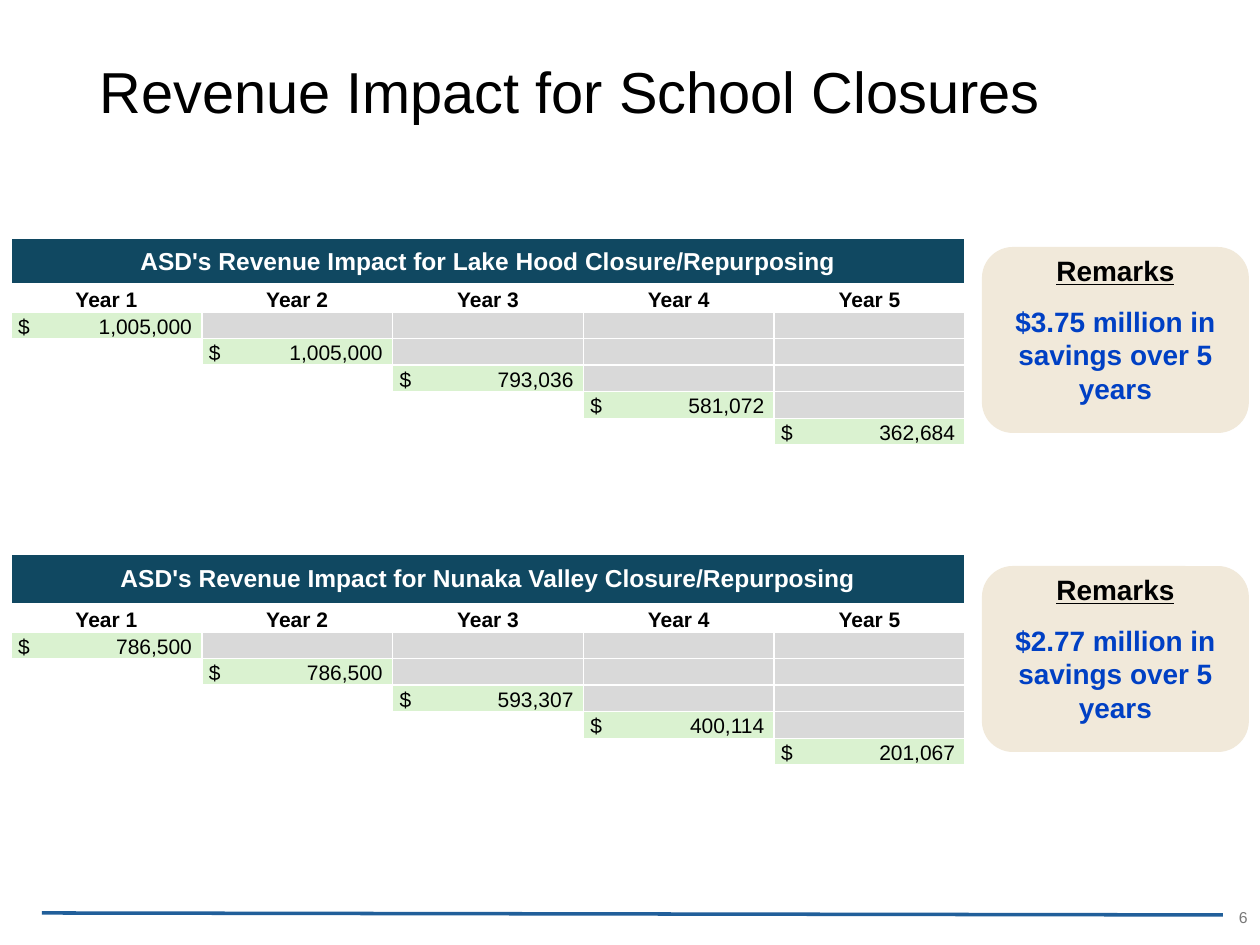
from lxml.etree import SubElement
from pptx import Presentation
from pptx.dml.color import RGBColor
from pptx.enum.shapes import MSO_CONNECTOR as Link, MSO_SHAPE as Shape
from pptx.enum.text import MSO_ANCHOR as Anchor, PP_ALIGN as Align
from pptx.oxml.ns import qn
from pptx.util import Pt

PX = 914400 // 126
FONT = "Arial"
BLACK = RGBColor(0, 0, 0)
WHITE = RGBColor(255, 255, 255)
NAVY = RGBColor(0x10, 0x48, 0x61)
GREEN = RGBColor(0xDA, 0xF2, 0xD0)
GRAY = RGBColor(0xD9, 0xD9, 0xD9)
SAND = RGBColor(0xF1, 0xE9, 0xDA)
BLUE = RGBColor(0x00, 0x40, 0xC4)
RULE = RGBColor(0x21, 0x5F, 0x9A)
PALE = RGBColor(0x79, 0x79, 0x79)

TITLE = "Revenue Impact for School Closures"
PAGE = "6"
YEARS = 5
SCHOOLS = [
    dict(head="ASD's Revenue Impact for Lake Hood Closure/Repurposing",
         sums=["1,005,000", "1,005,000", "793,036", "581,072", "362,684"],
         note="$3.75 million in savings over 5 years",
         top=238, band=46, card=247),
    dict(head="ASD's Revenue Impact for Nunaka Valley Closure/Repurposing",
         sums=["786,500", "786,500", "593,307", "400,114", "201,067"],
         note="$2.77 million in savings over 5 years",
         top=554, band=50, card=566),
]
LEFT, WIDE = 11, 954      # tables
LABEL, STEPS = 28, 133    # year row, all amount rows together
CARD_X, CARD_W, CARD_H = 982, 267, 186


def px(*sizes):
    return [round(size * PX) for size in sizes]


def write(frame, text, size, color, align=Align.LEFT, anchor=Anchor.TOP, **form):
    frame.word_wrap = True
    frame.vertical_anchor = anchor
    para = frame.paragraphs[0]
    para.alignment = align
    run = para.add_run()
    run.text = text
    run.font.color.rgb = color
    look = dict(name=FONT, size=Pt(size), **form)
    for key, value in look.items():
        setattr(run.font, key, value)
    return para


def label(slide, box, *args, **form):
    return write(slide.shapes.add_textbox(*px(*box)).text_frame, *args, **form)


def paint(cell, color):
    cell.fill.solid()
    cell.fill.fore_color.rgb = color


def amount(cell, text):
    """Dollar sign at the left, figure at a right tab."""
    cell.margin_left = 7 * PX
    props = cell.text_frame.paragraphs[0]._p.get_or_add_pPr()
    tabs = SubElement(props, qn("a:tabLst"))
    SubElement(tabs, qn("a:tab"), pos=str(174 * PX), algn="r")
    write(cell.text_frame, "$\t" + text, 12, BLACK)


def add_grid(slide, school):
    heights = [school["band"], LABEL] + [STEPS / YEARS] * YEARS
    box = px(LEFT, school["top"], WIDE, sum(heights))
    grid = slide.shapes.add_table(len(heights), YEARS, *box).table
    grid.first_row = grid.horz_banding = False
    for row, height in zip(grid.rows, px(*heights)):
        row.height = height
    for col in grid.columns:
        col.width = px(WIDE / YEARS)[0]
    for cell in grid.iter_cells():
        cell.margin_left = cell.margin_right = cell.margin_top = PX
        cell.margin_bottom = 0
        cell.vertical_anchor = Anchor.BOTTOM

    head = grid.cell(0, 0)
    head.merge(grid.cell(0, YEARS - 1))
    paint(head, NAVY)
    write(head.text_frame, school["head"], 14, WHITE, Align.CENTER, bold=True)
    head.vertical_anchor = Anchor.MIDDLE

    for year in range(YEARS):
        cell = grid.cell(1, year)
        cell.fill.background()
        write(cell.text_frame, f"Year {year + 1}", 12, BLACK, Align.CENTER,
              bold=True)
        cell.vertical_anchor = Anchor.BOTTOM
        for step, value in enumerate(school["sums"]):
            cell = grid.cell(step + 2, year)
            if step == year:
                paint(cell, GREEN)
                amount(cell, value)
            else:
                paint(cell, GRAY if year > step else WHITE)
                para = cell.text_frame.paragraphs[0]._p
                SubElement(para, qn("a:endParaRPr"), sz="1200")
            cell.vertical_anchor = Anchor.BOTTOM


def add_card(slide, school):
    top = school["card"]
    card = slide.shapes.add_shape(Shape.ROUNDED_RECTANGLE,
                                  *px(CARD_X, top, CARD_W, CARD_H))
    card.shadow.inherit = False
    card.fill.solid()
    card.fill.fore_color.rgb = SAND
    card.line.fill.background()
    label(slide, (CARD_X + 61, top, 145, 47), "Remarks", 16, BLACK,
          Align.CENTER, bold=True, underline=True)
    para = label(slide, (CARD_X, top + 51, CARD_W, 115), school["note"], 16,
                 BLUE, Align.CENTER, bold=True)
    para.space_after = Pt(18)


def main():
    deck = Presentation()
    deck.slide_width, deck.slide_height = px(1260, 945)
    slide = deck.slides.add_slide(deck.slide_layouts[5])

    rule = slide.shapes.add_connector(Link.STRAIGHT, *px(1223, 915, 42, 913))
    rule.line.color.rgb = RULE
    rule.line.width = Pt(2)
    SubElement(rule._element.spPr, qn("a:effectLst"))

    title = slide.shapes.title
    title.left, title.top, title.width, title.height = px(87, 3, 1086, 183)
    para = write(title.text_frame, TITLE, 33, BLACK, anchor=Anchor.MIDDLE)
    para.line_spacing = 0.9
    label(slide, (976, 892, 284, 50), PAGE, 9, PALE, Align.RIGHT, Anchor.MIDDLE)

    for school in SCHOOLS:
        add_card(slide, school)
        add_grid(slide, school)
    deck.save("out.pptx")


if __name__ == "__main__":
    main()
